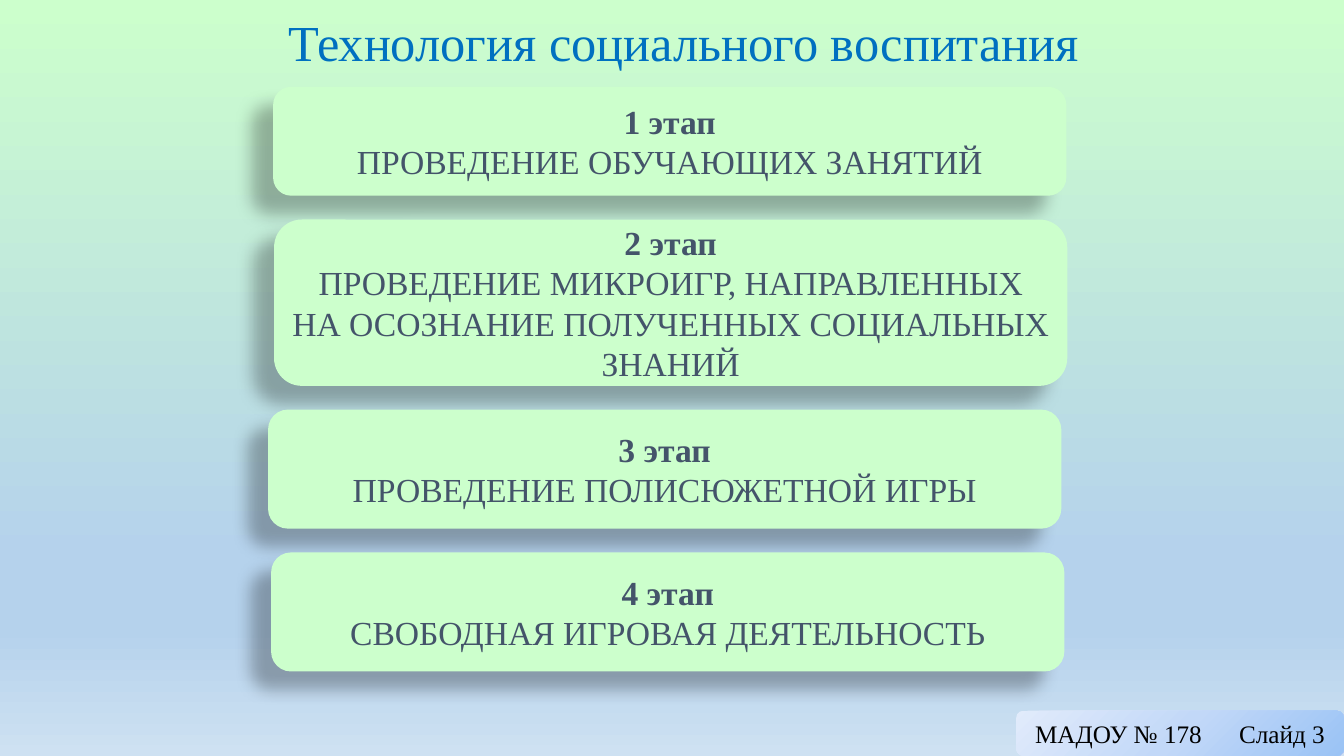
"""Build the slide on the four stages of the social education technology."""
from dataclasses import dataclass

from lxml import etree
from pptx import Presentation
from pptx import util as u
from pptx.dml.color import RGBColor
from pptx.enum import shapes, text
from pptx.oxml import parse_xml
from pptx.oxml.ns import nsdecls, qn

FONT = "Times New Roman"
MINT = RGBColor(0xCC, 0xFF, 0xCC)
SKY = RGBColor(0xB5, 0xD2, 0xEC)
PALE_SKY = RGBColor(0xCE, 0xE1, 0xF2)
TITLE_BLUE = RGBColor(0x00, 0x70, 0xC0)
SLATE = RGBColor(0x44, 0x54, 0x6A)
BLACK = RGBColor(0x00, 0x00, 0x00)
FOOTER_DARK = RGBColor(0x9A, 0xC3, 0xF5)
FOOTER_MID = RGBColor(0xC2, 0xD8, 0xF8)
FOOTER_LIGHT = RGBColor(0xE1, 0xEB, 0xFB)

STAGE_TOP, STAGE_WIDTH, STAGE_GAP = 62, 566.6, 17
DOWNWARD = '<a:lin ang="5400000" scaled="0"/>'
FROM_CORNER = '<a:path path="circle"><a:fillToRect l="100000" t="100000"/></a:path>'


@dataclass(frozen=True)
class Stage:
    heading: str
    activity: str
    left: float
    height: float


STAGES = [
    Stage("1 этап", "ПРОВЕДЕНИЕ ОБУЧАЮЩИХ ЗАНЯТИЙ", 195.1, 77.8),
    Stage("2 этап", "ПРОВЕДЕНИЕ МИКРОИГР, НАПРАВЛЕННЫХ НА ОСОЗНАНИЕ "
          "ПОЛУЧЕННЫХ СОЦИАЛЬНЫХ ЗНАНИЙ", 195.8, 118.8),
    Stage("3 этап", "ПРОВЕДЕНИЕ ПОЛИСЮЖЕТНОЙ ИГРЫ", 191.5, 85),
    Stage("4 этап", "СВОБОДНАЯ ИГРОВАЯ ДЕЯТЕЛЬНОСТЬ", 193.7, 85),
]


def write(paragraph, wording: str, *, size: float, color: RGBColor,
          bold: bool = False, align=text.PP_ALIGN.CENTER) -> None:
    """Add a formatted run to a paragraph."""
    paragraph.alignment = align
    run = paragraph.add_run()
    run.text = wording
    run.font.name = FONT
    run.font.size = u.Pt(size)
    run.font.bold = bold
    run.font.color.rgb = color


def fill_gradient(fill, owner, stops: list[tuple[int, RGBColor]], shade: str) -> None:
    """Give a fill its colour stops and shading direction."""
    fill.gradient()
    colors = "".join(f'<a:gs pos="{position * 1000}"><a:srgbClr val="{color}"/></a:gs>'
                     for position, color in stops)
    gradient = owner.find(".//" + qn("a:gradFill"))
    gradient.getparent().replace(gradient, parse_xml(
        f'<a:gradFill {nsdecls("a")} rotWithShape="1">'
        f'<a:gsLst>{colors}</a:gsLst>{shade}</a:gradFill>'))


def add_panel(slide, left: float, top: float, width: float, height: float,
              inset: float):
    """Add a borderless rounded panel."""
    panel = slide.shapes.add_shape(shapes.MSO_SHAPE.ROUNDED_RECTANGLE,
                                   *map(u.Pt, (left, top, width, height)))
    panel.shadow.inherit = False
    panel.line.fill.background()
    frame = panel.text_frame
    frame.word_wrap = True
    frame.vertical_anchor = text.MSO_ANCHOR.MIDDLE
    frame.margin_left = frame.margin_right = u.Pt(inset)
    return panel


def add_stage(slide, stage: Stage, top: float) -> None:
    """Draw one stage with its soft shadow."""
    panel = add_panel(slide, stage.left, top, STAGE_WIDTH, stage.height, 6.5)
    panel.fill.solid()
    panel.fill.fore_color.rgb = MINT
    effects = panel.element.spPr.find(qn("a:effectLst"))
    shadow = etree.SubElement(effects, qn("a:outerShdw"), blurRad=str(u.Pt(11.8)),
                              dist=str(u.Pt(19.7)), dir=str(141 * 60000),
                              algn="ctr", rotWithShape="0")
    tint = etree.SubElement(shadow, qn("a:srgbClr"), val=str(BLACK))
    etree.SubElement(tint, qn("a:alpha"), val="28000")
    frame = panel.text_frame
    write(frame.paragraphs[0], stage.heading, size=24, color=SLATE, bold=True)
    write(frame.add_paragraph(), stage.activity, size=24, color=SLATE)


def add_title(slide) -> None:
    """Place and format the title."""
    title = slide.shapes.title
    title.left, title.top, title.width, title.height = map(u.Pt, (191.5, 6.5, 594, 46.8))
    frame = title.text_frame
    frame.word_wrap = True
    frame.auto_size = text.MSO_AUTO_SIZE.NONE
    frame.vertical_anchor = text.MSO_ANCHOR.BOTTOM
    frame.paragraphs[0].line_spacing = 0.7
    write(frame.paragraphs[0], "Технология социального воспитания",
          size=36, color=TITLE_BLUE)


def add_footer(slide) -> None:
    """Draw the corner label with institution and slide number."""
    footer = add_panel(slide, 725.8, 507.6, 234.2, 32.4, 12)
    fill_gradient(footer.fill, footer.element,
                  [(0, FOOTER_DARK), (50, FOOTER_MID), (100, FOOTER_LIGHT)], FROM_CORNER)
    label = footer.text_frame.paragraphs[0]
    write(label, "МАДОУ № 178\tСлайд 3", size=18, color=BLACK, align=text.PP_ALIGN.LEFT)
    tabs = etree.SubElement(label._p.get_or_add_pPr(), qn("a:tabLst"))
    etree.SubElement(tabs, qn("a:tab"), pos=str(u.Pt(145.7)), algn="l")


def main() -> None:
    """Build and save the presentation."""
    deck = Presentation()
    deck.slide_width, deck.slide_height = u.Pt(960), u.Pt(540)
    slide = deck.slides.add_slide(deck.slide_layouts[5])
    fill_gradient(slide.background.fill, slide.element,
                  [(0, MINT), (74, SKY), (83, SKY), (100, PALE_SKY)], DOWNWARD)
    add_title(slide)
    top = STAGE_TOP
    for stage in STAGES:
        add_stage(slide, stage, top)
        top += stage.height + STAGE_GAP
    add_footer(slide)
    deck.save("out.pptx")


if __name__ == "__main__":
    main()
